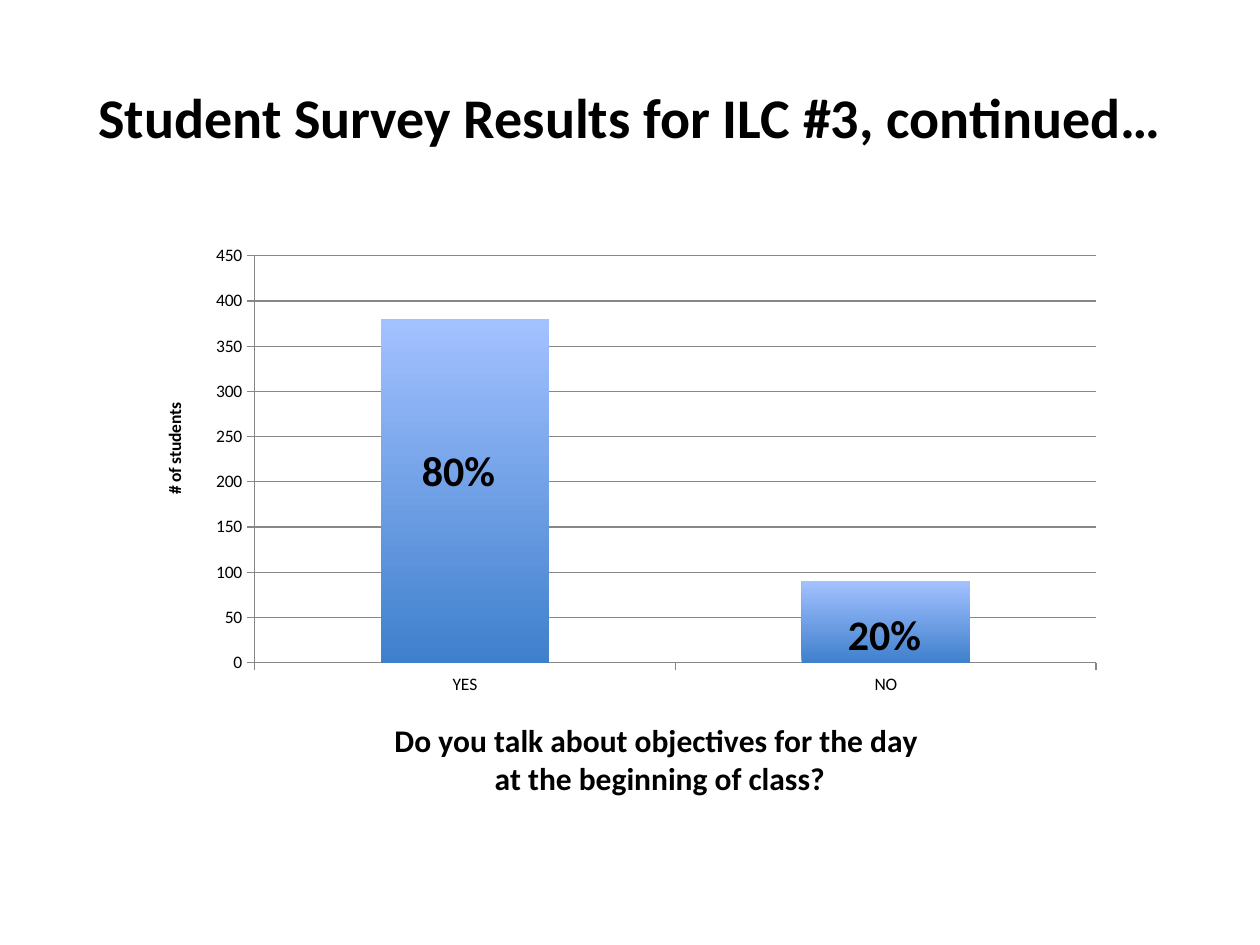
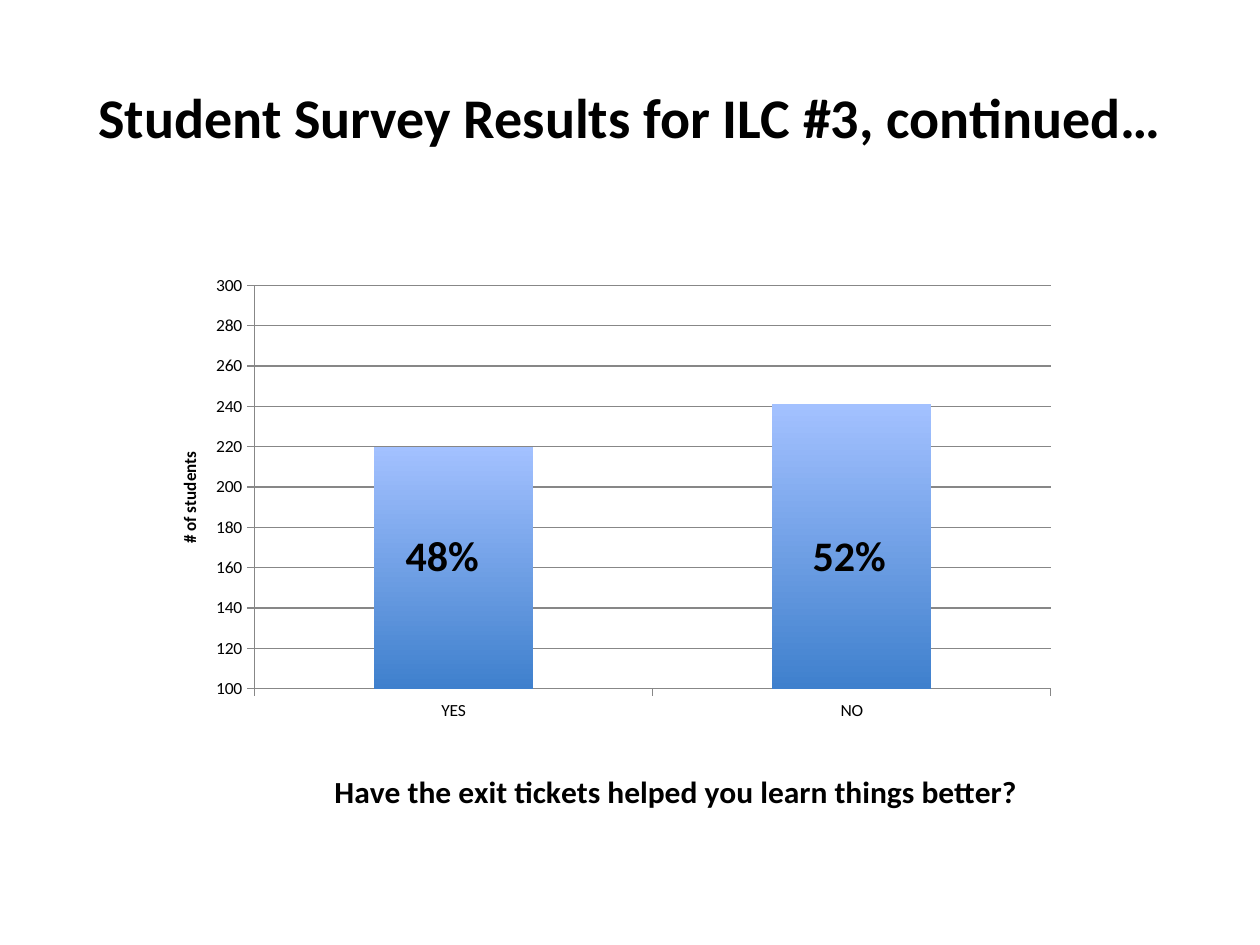
from lxml import etree
from pptx import Presentation
from pptx.chart.data import CategoryChartData
from pptx.dml.color import RGBColor
from pptx.enum.chart import XL_CHART_TYPE, XL_TICK_MARK
from pptx.enum.text import MSO_ANCHOR, MSO_AUTO_SIZE, PP_ALIGN
from pptx.oxml.ns import qn
from pptx.util import Inches, Pt

COLUMN = XL_CHART_TYPE.COLUMN_CLUSTERED
OUT = XL_TICK_MARK.OUTSIDE
MIDDLE, CENTER = MSO_ANCHOR.MIDDLE, PP_ALIGN.CENTER
FIT = MSO_AUTO_SIZE.SHAPE_TO_FIT_TEXT

FONT = "Calibri"
COLORS = {"text": "000000", "line": "878787", "low": "3F80CD", "high": "A3C1FF"}
TITLE = "Student Survey Results for ILC #3, continued…"
COUNT = "# of students"
ANSWERS = ["YES", "NO"]

# Places in inches; boxes are left, top, width, height.
SURVEYS = [
    {
        "ask": ["Do you talk about objectives for the day ",
                "at the beginning of class?"],
        "votes": [380, 90],
        "scale": (0, 450, 50),
        "frame": (1.15, 1.86, 7.71, 4.62),
        "plot": (2.02, 2.03, 6.68, 3.23),
        "ask_at": (3.1, 5.68),
        "count_at": (1.27, 3.17),
        "shares": [("80%", 3.25, 3.48), ("20%", 6.63, 4.78)],
    },
    {
        "ask": ["Have the exit tickets helped you learn things better?"],
        "votes": [220, 241],
        "scale": (100, 300, 20),
        "frame": (1.15, 2.11, 7.34, 4.4),
        "plot": (2.02, 2.27, 6.32, 3.29),
        "ask_at": (2.61, 6.18),
        "count_at": (1.39, 3.62),
        "shares": [("48%", 3.12, 4.15), ("52%", 6.35, 4.15)],
    },
]


def color(name):
    return RGBColor.from_string(COLORS[name])


def style(font, size, bold):
    font.name, font.size, font.bold = FONT, Pt(size), bold
    font.color.rgb = color("text")


def write(para, text, size):
    run = para.add_run()
    run.text = text
    style(run.font, size, True)


def pin(part, index, frame, place):
    """Fix a chart part at a slide position, given as shares of the chart."""
    for old in part.findall(qn("c:layout")):
        part.remove(old)
    layout = etree.Element(qn("c:layout"))
    part.insert(index, layout)
    manual = etree.SubElement(layout, qn("c:manualLayout"))
    left, top, wide, high = frame
    x, y = place[:2]
    rules = [("xMode", "edge"), ("yMode", "edge"),
             ("x", (x - left) / wide), ("y", (y - top) / high)]
    if len(place) == 4:
        rules.insert(0, ("layoutTarget", "inner"))
        rules += [("w", place[2] / wide), ("h", place[3] / high)]
    for tag, value in rules:
        etree.SubElement(manual, qn("c:" + tag)).set("val", str(value))


def name_axis(axis, lines, size, frame, place, turn=0):
    title = axis.axis_title
    text = title.text_frame
    for i, line in enumerate(lines):
        para = text.add_paragraph() if i else text.paragraphs[0]
        para.alignment = CENTER
        write(para, line, size)
    body = text._txBody.find(qn("a:bodyPr"))
    body.set("rot", str(turn * 60000))
    body.set("vert", "horz")
    pin(title._element, 1, frame, place)


def add_bars(slide, survey):
    frame = survey["frame"]
    data = CategoryChartData()
    data.categories = ANSWERS
    data.add_series("Series 1", survey["votes"])
    chart = slide.shapes.add_chart(COLUMN, *map(Inches, frame), data).chart
    chart.has_legend = chart.has_title = False
    style(chart.font, 10, False)

    plot = chart.plots[0]
    plot.gap_width, plot.vary_by_categories = 150, False
    fill = plot.series[0].format.fill
    fill.gradient()
    fill.gradient_angle = 90
    for stop, name in zip(fill.gradient_stops, ("low", "high")):
        stop.color.rgb = color(name)

    cats, vals = chart.category_axis, chart.value_axis
    vals.minimum_scale, vals.maximum_scale, vals.major_unit = survey["scale"]
    vals.has_major_gridlines = True
    for axis in (cats, vals):
        axis.major_tick_mark = OUT
    for part in (cats, vals, vals.major_gridlines):
        part.format.line.color.rgb = color("line")
        part.format.line.width = Pt(0.75)

    name_axis(cats, survey["ask"], 18, frame, survey["ask_at"])
    name_axis(vals, [COUNT], 10, frame, survey["count_at"], -90)
    pin(chart._chartSpace.chart.plotArea, 0, frame, survey["plot"])


def add_share(slide, text, left, top):
    box = slide.shapes.add_textbox(*map(Inches, (left, top, 0.79, 0.5)))
    frame = box.text_frame
    frame.word_wrap, frame.auto_size = False, FIT
    write(frame.paragraphs[0], text, 24)


def add_title(slide):
    title = slide.shapes.title
    title.left, title.top, title.width, title.height = map(
        Inches, (0.5, 0.3, 9, 1.25))
    title.text_frame.vertical_anchor = MIDDLE
    para = title.text_frame.paragraphs[0]
    para.alignment = CENTER
    write(para, TITLE, 32)


def main():
    deck = Presentation()
    deck.slide_width, deck.slide_height = Inches(10), Inches(7.5)
    for survey in SURVEYS:
        slide = deck.slides.add_slide(deck.slide_layouts[5])
        add_title(slide)
        add_bars(slide, survey)
        for share in survey["shares"]:
            add_share(slide, *share)
    deck.save("out.pptx")


if __name__ == "__main__":
    main()
